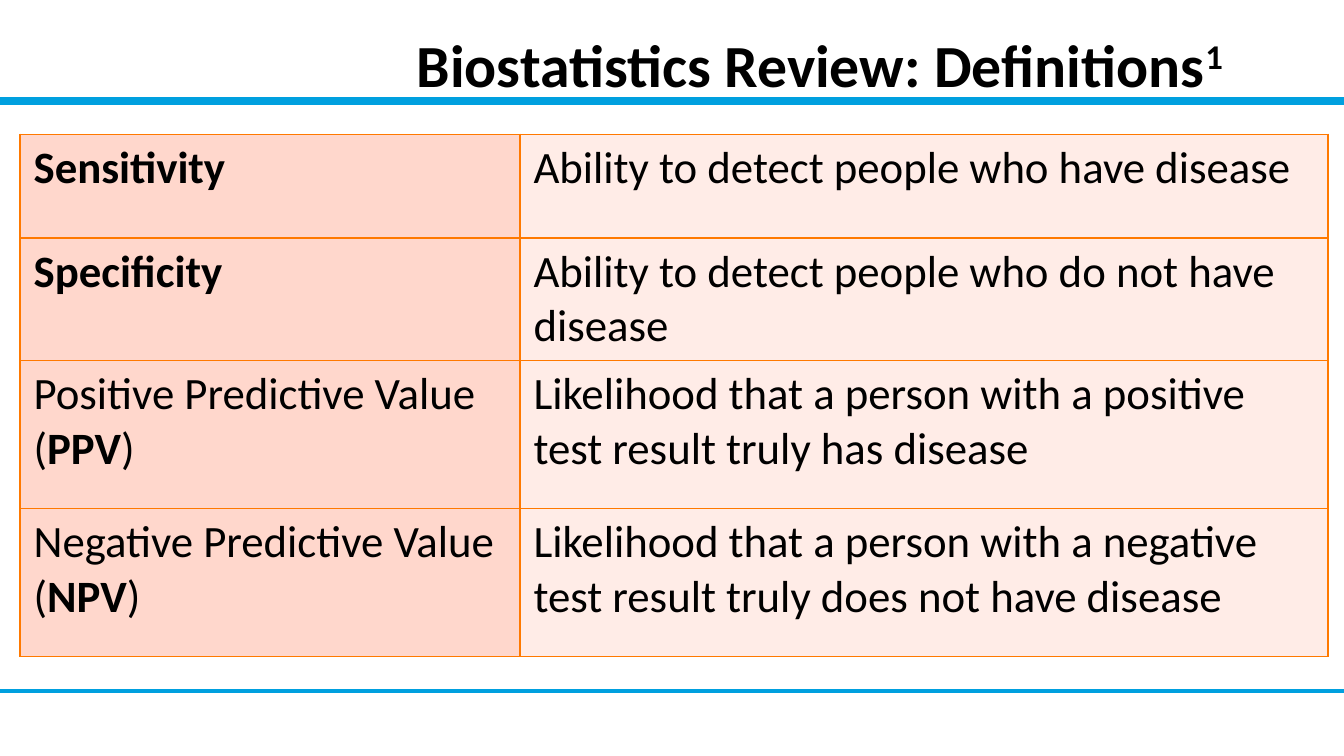
"""Build a slide that defines four biostatistics terms in a table."""
from lxml import etree
from pptx import Presentation
from pptx.dml.color import RGBColor
from pptx.enum.shapes import MSO_CONNECTOR
from pptx.enum.text import MSO_ANCHOR, PP_ALIGN
from pptx.oxml.ns import qn
from pptx.util import Inches, Pt

STRAIGHT = MSO_CONNECTOR.STRAIGHT
MIDDLE = MSO_ANCHOR.MIDDLE
LEFT = PP_ALIGN.LEFT

BLACK = RGBColor(0x00, 0x00, 0x00)
BLUE = RGBColor(0x00, 0xA0, 0xDF)
ORANGE = RGBColor(0xFF, 0x79, 0x00)
TERM_FILL = RGBColor(0xFF, 0xD7, 0xCC)
MEANING_FILL = RGBColor(0xFF, 0xEC, 0xE7)
FONT = "Calibri"
PAGE_WIDTH = Inches(10)
PAGE_HEIGHT = PAGE_WIDTH * 9 // 16

TITLE = [("Biostatistics Review: Definitions", True)]
TITLE_NOTE = [("1", True)]
DEFINITIONS = [
    ([("Sensitivity", True)],
     [("Ability to detect people who have disease", False)]),
    ([("Specificity", True)],
     [("Ability to detect people who do not have disease", False)]),
    ([("Positive Predictive Value (", False), ("PPV", True), (")", False)],
     [("Likelihood that a person with a positive test result truly has disease", False)]),
    ([("Negative Predictive Value (", False), ("NPV", True), (")", False)],
     [("Likelihood that a person with a negative test result truly does not have disease", False)]),
]
COLUMN_WIDTHS = [3.72, 6.01]
ROW_HEIGHTS = [0.77, 0.77, 1.1, 1.1]
COLUMN_FILLS = [TERM_FILL, MEANING_FILL]
RULES = [(5.14, 2), (0.75, 4.5)]


def write(para, spans, size=24, color=BLACK, baseline=None):
    """Add (text, bold) spans to a paragraph."""
    for text, bold in spans:
        span = para.add_run()
        span.text = text
        span.font.name = FONT
        span.font.size = Pt(size)
        span.font.bold = bold
        span.font.color.rgb = color
        if baseline:
            span.font._element.set("baseline", str(baseline * 1000))


def add_rule(page, top, width):
    """Draw a full-width horizontal line."""
    rule = page.shapes.add_connector(STRAIGHT, 0, Inches(top), PAGE_WIDTH, Inches(top))
    rule.line.color.rgb = BLUE
    rule.line.width = Pt(width)
    etree.SubElement(rule._element.spPr, qn("a:effectLst"))


def format_cell(cell, fill):
    """Set the borders and then the fill of a cell."""
    properties = cell._tc.get_or_add_tcPr()
    for side in ("a:lnL", "a:lnR", "a:lnT", "a:lnB"):
        border = etree.SubElement(properties, qn(side), w=str(Pt(1)))
        solid = etree.SubElement(border, qn("a:solidFill"))
        etree.SubElement(solid, qn("a:srgbClr"), val=str(ORANGE))
    cell.fill.solid()
    cell.fill.fore_color.rgb = fill


def add_definitions(page):
    """Add the table of terms and meanings."""
    frame = page.shapes.add_table(
        len(DEFINITIONS), len(COLUMN_WIDTHS), Inches(0.15), Inches(1),
        Inches(sum(COLUMN_WIDTHS)), Inches(sum(ROW_HEIGHTS)))
    table = frame.table
    table.first_row = False
    table.horz_banding = False
    for column, width in zip(table.columns, COLUMN_WIDTHS):
        column.width = Inches(width)
    for row, height, definition in zip(table.rows, ROW_HEIGHTS, DEFINITIONS):
        row.height = Inches(height)
        for cell, spans, fill in zip(row.cells, definition, COLUMN_FILLS):
            write(cell.text_frame.paragraphs[0], spans)
            format_cell(cell, fill)


def main():
    deck = Presentation()
    deck.slide_width = PAGE_WIDTH
    deck.slide_height = PAGE_HEIGHT
    page = deck.slides.add_slide(deck.slide_layouts[5])

    for top, width in RULES:
        add_rule(page, top, width)

    title = page.shapes.title
    title.left, title.top = Inches(3), Inches(0)
    title.width, title.height = Inches(6.5), Inches(0.94)
    title.text_frame.vertical_anchor = MIDDLE
    para = title.text_frame.paragraphs[0]
    para.alignment = LEFT
    write(para, TITLE, size=32)
    write(para, TITLE_NOTE, size=32, baseline=30)

    add_definitions(page)
    deck.save("out.pptx")


if __name__ == "__main__":
    main()
